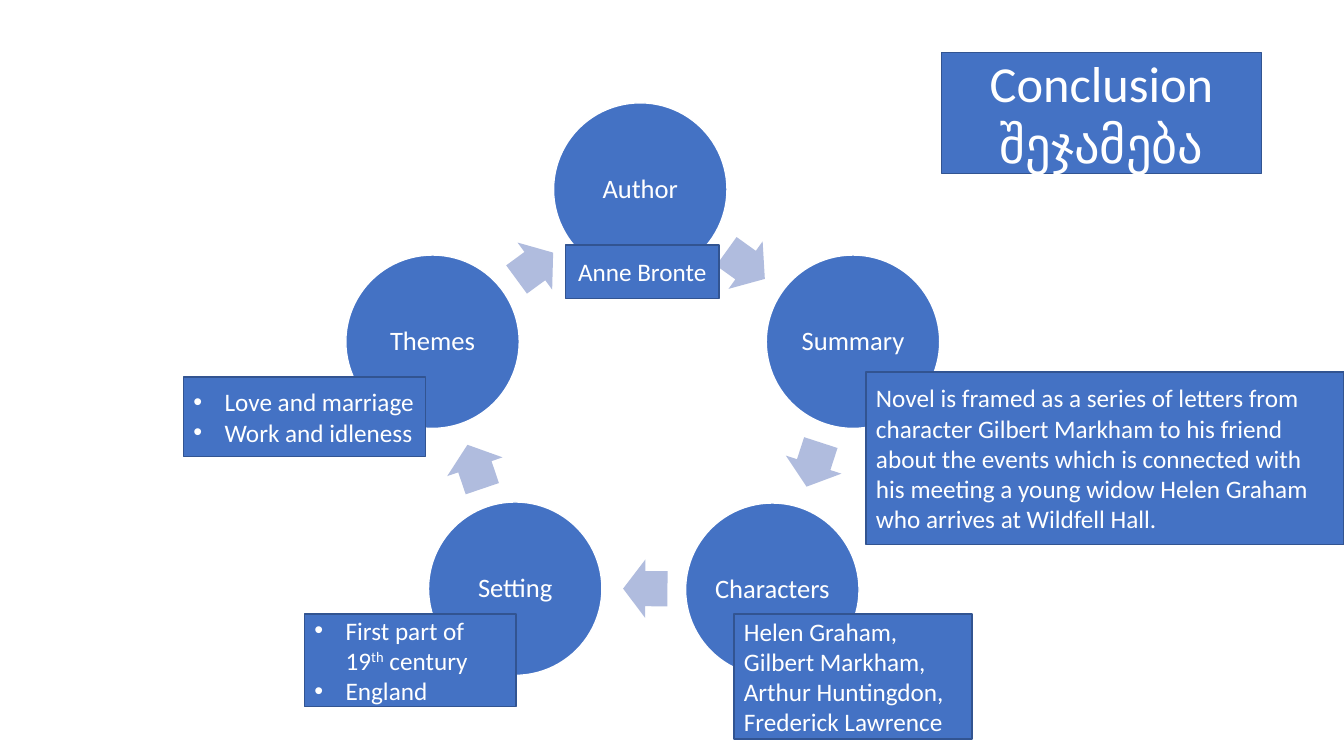
from dataclasses import dataclass

from lxml.etree import SubElement
from pptx import Presentation
from pptx.dml.color import RGBColor
from pptx.enum.shapes import MSO_SHAPE as Preset
from pptx.enum.text import MSO_ANCHOR as Anchor, MSO_AUTO_SIZE as AutoSize, PP_ALIGN as Align
from pptx.oxml.ns import qn
from pptx.shapes.autoshape import Shape
from pptx.slide import Slide
from pptx.text.text import _Paragraph as Paragraph
from pptx.util import Inches, Pt


@dataclass(frozen=True)
class Theme:
    font: str = "Calibri"
    blue: RGBColor = RGBColor(0x44, 0x72, 0xC4)
    outline: RGBColor = RGBColor(0x32, 0x54, 0x91)
    arrow: RGBColor = RGBColor(0xB0, 0xBC, 0xDE)
    white: RGBColor = RGBColor(0xFF, 0xFF, 0xFF)
    title_size: int = 36
    topic_size: int = 19
    note_size: int = 18


@dataclass(frozen=True)
class Topic:
    label: str
    left: float
    top: float


@dataclass(frozen=True)
class CycleArrow:
    left: float
    top: float
    width: float
    angle: float


@dataclass(frozen=True)
class Span:
    text: str
    superscript: bool = False


@dataclass(frozen=True)
class Note:
    left: float
    top: float
    width: float
    height: float
    paragraphs: tuple[tuple[Span, ...], ...]
    align: Align = Align.LEFT
    bulleted: bool = False


THEME = Theme()
CIRCLE_SIZE = 1.72
ARROW_HEIGHT = 0.58
BULLET_INDENT = 0.31

TOPICS = (
    Topic("Author", 5.49, 1.02),
    Topic("Summary", 7.6, 2.53),
    Topic("Characters", 6.8, 4.99),
    Topic("Setting", 4.25, 4.98),
    Topic("Themes", 3.43, 2.53),
)
ARROWS = (
    CycleArrow(7.16, 2.34, 0.47, 35.7),
    CycleArrow(7.84, 4.32, 0.46, 108),
    CycleArrow(6.18, 5.55, 0.44, 180.2),
    CycleArrow(4.48, 4.34, 0.46, 251.3),
    CycleArrow(5.08, 2.35, 0.45, 323.7),
)
NOTES = (
    Note(5.61, 2.43, 1.52, 0.53, ((Span("Anne Bronte"),),), Align.CENTER),
    Note(1.82, 3.74, 2.4, 0.79,
         ((Span("Love and marriage"),), (Span("Work and idleness"),)),
         Align.JUSTIFY, bulleted=True),
    Note(3.02, 6.09, 2.1, 0.92,
         ((Span("First part of 19"), Span("th", superscript=True), Span(" century")),
          (Span("England"),)), bulleted=True),
    Note(7.28, 6.09, 2.36, 1.24,
         ((Span("Helen Graham, Gilbert Markham, Arthur Huntingdon, Frederick Lawrence"),),)),
    Note(8.59, 3.69, 4.74, 1.71,
         ((Span("Novel is framed as a series of letters from character Gilbert Markham "
                "to his friend about the events which is connected with his meeting a "
                "young widow Helen Graham who arrives at Wildfell Hall."),),)),
)


def paint(shape: Shape, fill: RGBColor, line: RGBColor | None) -> None:
    shape.fill.solid()
    shape.fill.fore_color.rgb = fill
    if line is None:
        shape.line.fill.background()
    else:
        shape.line.color.rgb = line
        shape.line.width = Pt(1)


def add_span(para: Paragraph, span: Span, size: int) -> None:
    run = para.add_run()
    run.text = span.text
    run.font.name = THEME.font
    run.font.size = Pt(size)
    run.font.color.rgb = THEME.white
    if span.superscript:
        run.font._element.set("baseline", "30000")


def add_bullet(para: Paragraph) -> None:
    properties = para._p.get_or_add_pPr()
    properties.set("marL", str(Inches(BULLET_INDENT)))
    properties.set("indent", str(-Inches(BULLET_INDENT)))
    SubElement(properties, qn("a:buFont"), typeface="Arial")
    SubElement(properties, qn("a:buChar"), char="•")


def fill_title(page: Slide) -> None:
    title = page.shapes.title
    title.left, title.top = Inches(9.34), Inches(0.52)
    title.width, title.height = Inches(3.17), Inches(1.2)
    paint(title, THEME.blue, THEME.outline)
    frame = title.text_frame
    frame.auto_size = AutoSize.NONE
    frame.word_wrap = True
    frame.vertical_anchor = Anchor.MIDDLE
    para = frame.paragraphs[0]
    para.alignment = Align.CENTER
    para.line_spacing = 1.0
    add_span(para, Span("Conclusion"), THEME.title_size)
    para.add_line_break()
    add_span(para, Span("შეჯამება"), THEME.title_size)


def draw_topic(page: Slide, topic: Topic) -> None:
    circle = page.shapes.add_shape(Preset.OVAL, Inches(topic.left), Inches(topic.top),
                                   Inches(CIRCLE_SIZE), Inches(CIRCLE_SIZE))
    circle.shadow.inherit = False
    paint(circle, THEME.blue, THEME.white)
    frame = circle.text_frame
    frame.margin_left = frame.margin_right = Inches(0.03)
    frame.margin_top = frame.margin_bottom = Inches(0.03)
    frame.word_wrap = False
    frame.vertical_anchor = Anchor.MIDDLE
    para = frame.paragraphs[0]
    para.alignment = Align.CENTER
    para.line_spacing = 0.9
    add_span(para, Span(topic.label), THEME.topic_size)


def draw_arrow(page: Slide, item: CycleArrow) -> None:
    arrow = page.shapes.add_shape(Preset.RIGHT_ARROW, Inches(item.left), Inches(item.top),
                                  Inches(item.width), Inches(ARROW_HEIGHT))
    arrow.shadow.inherit = False
    arrow.rotation = item.angle
    arrow.adjustments[0] = 0.6
    arrow.adjustments[1] = 0.5
    paint(arrow, THEME.arrow, None)


def draw_note(page: Slide, note: Note) -> None:
    box = page.shapes.add_shape(Preset.RECTANGLE, Inches(note.left), Inches(note.top),
                                Inches(note.width), Inches(note.height))
    box.shadow.inherit = False
    paint(box, THEME.blue, THEME.outline)
    frame = box.text_frame
    frame.word_wrap = True
    frame.vertical_anchor = Anchor.MIDDLE
    for index, spans in enumerate(note.paragraphs):
        para = frame.add_paragraph() if index else frame.paragraphs[0]
        para.alignment = note.align
        if note.bulleted:
            add_bullet(para)
        for span in spans:
            add_span(para, span, THEME.note_size)


def main() -> None:
    deck = Presentation()
    deck.slide_width, deck.slide_height = Inches(13.33), Inches(7.5)
    page = deck.slides.add_slide(deck.slide_layouts.get_by_name("Title Only"))
    fill_title(page)
    for topic, arrow in zip(TOPICS, ARROWS):
        draw_topic(page, topic)
        draw_arrow(page, arrow)
    for note in NOTES:
        draw_note(page, note)
    deck.save("out.pptx")


if __name__ == "__main__":
    main()
